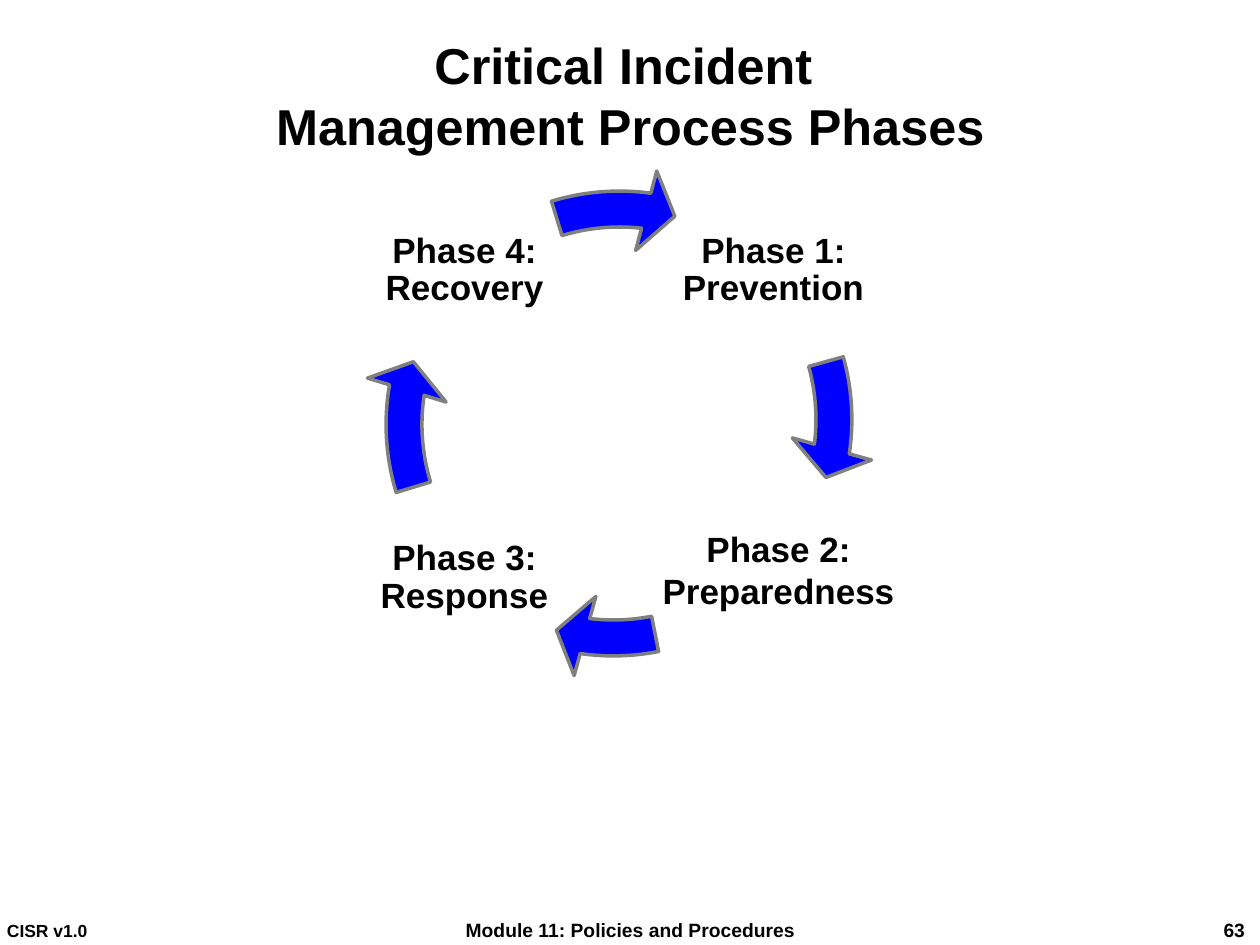
import dataclasses

import pptx
import pptx.dml.color
import pptx.enum.shapes
import pptx.enum.text
import pptx.util

ANCHOR = pptx.enum.text.MSO_ANCHOR
ALIGN = pptx.enum.text.PP_ALIGN
SHAPE = pptx.enum.shapes.MSO_SHAPE


@dataclasses.dataclass(frozen=True)
class Theme:
    font: str = "Arial"
    ink: str = "000000"
    blue: str = "0000FF"
    edge: str = "808080"
    title: float = 28.8
    phase: int = 20
    foot: int = 11
    small: int = 10


class Deck:
    """Holds the style and the current slide, and draws each kind of element."""

    def __init__(self, theme):
        self.theme = theme
        self.file = pptx.Presentation()
        self.file.slide_width = self.emu(1260)
        self.file.slide_height = self.emu(945)
        self.slide = self.file.slides.add_slide(self.file.slide_layouts[5])

    def emu(self, px):
        return pptx.util.Emu(round(px * 914400 / 126))

    def tint(self, code):
        return pptx.dml.color.RGBColor.from_string(code)

    def letter(self, shape, text, size, align, pad, space=None):
        frame = shape.text_frame
        frame.text = text
        frame.word_wrap = True
        frame.auto_size = pptx.enum.text.MSO_AUTO_SIZE.NONE
        frame.vertical_anchor = ANCHOR.MIDDLE
        frame.margin_left, frame.margin_top, frame.margin_right, frame.margin_bottom = map(self.emu, pad)
        for line in frame.paragraphs:
            line.alignment = align
            line.line_spacing = space
            for run in line.runs:
                run.font.name = self.theme.font
                run.font.size = pptx.util.Pt(size)
                run.font.bold = True
                run.font.color.rgb = self.tint(self.theme.ink)

    def title(self, box, text):
        shape = self.slide.shapes.title
        shape.left, shape.top, shape.width, shape.height = map(self.emu, box)
        self.letter(shape, text, self.theme.title, ALIGN.CENTER, (1, 1, 1, 1))

    def label(self, box, text, size, align, pad, space=None):
        shape = self.slide.shapes.add_textbox(*map(self.emu, box))
        self.letter(shape, text, size, align, pad, space)

    def arrow(self, left, top, start, end):
        size = 513
        shape = self.slide.shapes.add_shape(SHAPE.CIRCULAR_ARROW, *map(self.emu, (left, top, size, size)))
        shape.shadow.inherit = False
        turns = [angle * 0.6 for angle in (7.75, end, start)]
        for index, value in enumerate([0.07, *turns, 0.08]):
            shape.adjustments[index] = value
        shape.fill.solid()
        shape.fill.fore_color.rgb = self.tint(self.theme.blue)
        shape.line.color.rgb = self.tint(self.theme.edge)
        shape.line.width = pptx.util.Pt(2)


def main():
    theme = Theme()
    deck = Deck(theme)
    deck.title((57, 32, 1147, 126), "Critical Incident \vManagement Process Phases")

    feet = [
        (410, 441, "Module 11: Policies and Procedures", theme.foot, ALIGN.CENTER, 13, 13),
        (6, 391, "CISR v1.0", theme.small, ALIGN.LEFT, 1, 6),
        (1203, 55, "63", theme.foot, ALIGN.RIGHT, 13, 13),
    ]
    for left, width, text, size, align, west, east in feet:
        deck.label((left, 914, width, 32), text, size, align, (west, 1, east, 1))

    phases = [
        ("Phase 1: Prevention", (675, 180, 197, 181), 0.9, (362, 163, 344.43, 7.87)),
        ("Phase 2: Preparedness", (655, 479, 247, 181), None, (357, 166, 78.86, 97.6)),
        ("Phase 3: Response", (374, 488, 181, 181), 0.9, (363, 168, 163.07, 189.19)),
        ("Phase 4: Recovery", (374, 180, 181, 181), 0.9, (363, 168, 253.07, 277.12)),
    ]
    for text, box, space, arc in phases:
        deck.label(box, text, theme.phase, ALIGN.CENTER, (4, 4, 4, 4), space)
        deck.arrow(*arc)

    deck.file.save("out.pptx")


if __name__ == "__main__":
    main()
